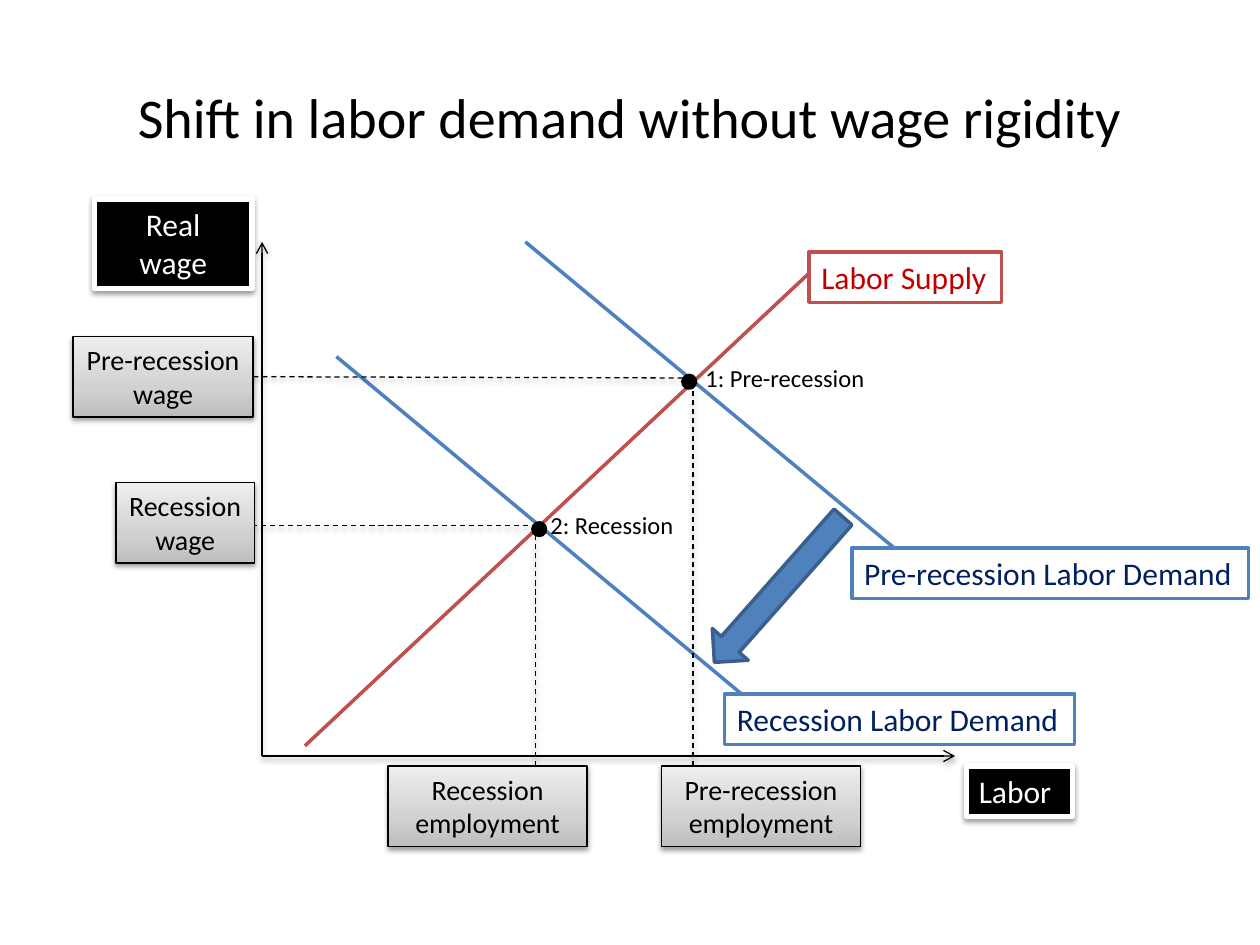
from copy import deepcopy

from lxml.etree import SubElement
from pptx import Presentation
from pptx.dml.color import RGBColor
from pptx.enum.dml import MSO_LINE
from pptx.enum.shapes import MSO_CONNECTOR, MSO_SHAPE
from pptx.enum.text import MSO_ANCHOR, MSO_AUTO_SIZE, PP_ALIGN
from pptx.oxml.ns import qn
from pptx.util import Inches, Pt

COLORS = {
    "black": "000000",
    "white": "FFFFFF",
    "demand": "4F81BD",
    "demand_text": "002060",
    "supply": "C0504D",
    "supply_text": "C00000",
    "arrow_edge": "3A5F8C",
    "grey_dark": "BDBDBD",
    "grey_middle": "D1D1D1",
    "grey_light": "EEEEEE",
}
GREY_STOPS = [(0, "grey_dark"), (0.35, "grey_middle"), (1, "grey_light")]


def rgb(name):
    return RGBColor.from_string(COLORS[name])


def add_shadow(effects):
    shadow = SubElement(effects, qn("a:outerShdw"), blurRad=str(Pt(3.1)),
                        dist=str(Pt(1.6)), dir="5400000", rotWithShape="0")
    color = SubElement(shadow, qn("a:srgbClr"), val=COLORS["black"])
    SubElement(color, qn("a:alpha"), val="38000")


def set_line(line, color, width):
    line.color.rgb = rgb(color)
    line.width = Pt(width)


def fill_grey(shape):
    shape.fill.gradient()
    shape.fill.gradient_angle = 90
    stop_list = shape._element.spPr.find(qn("a:gradFill")).find(qn("a:gsLst"))
    stop_list.append(deepcopy(stop_list[-1]))
    for stop, (position, color) in zip(shape.fill.gradient_stops, GREY_STOPS):
        stop.position = position
        stop.color.rgb = rgb(color)


def write_text(shape, lines, size, color, align, wrap):
    frame = shape.text_frame
    frame.word_wrap = wrap
    frame.auto_size = MSO_AUTO_SIZE.SHAPE_TO_FIT_TEXT
    frame.vertical_anchor = MSO_ANCHOR.TOP
    for index, line in enumerate(lines):
        para = frame.add_paragraph() if index else frame.paragraphs[0]
        para.alignment = align
        span = para.add_run()
        span.text = line
        span.font.size = Pt(size)
        span.font.name = "Calibri"
        span.font.color.rgb = rgb(color)


def add_preset(page, kind, place, fill, edge, width, shadow=False):
    shape = page.shapes.add_shape(kind, *map(Inches, place))
    if fill == "grey":
        fill_grey(shape)
    else:
        shape.fill.solid()
        shape.fill.fore_color.rgb = rgb(fill)
    set_line(shape.line, edge, width)
    shape.shadow.inherit = False
    if shadow:
        add_shadow(shape._element.spPr.find(qn("a:effectLst")))
    return shape


def add_value_box(page, place, lines, wrap):
    box = add_preset(page, MSO_SHAPE.RECTANGLE, place, "grey", "black", 0.75, True)
    write_text(box, lines, 16, "black", PP_ALIGN.CENTER, wrap)
    return box


def add_axis_box(page, place, lines, align, wrap):
    box = add_preset(page, MSO_SHAPE.RECTANGLE, place, "black", "white", 3, True)
    write_text(box, lines, 18, "white", align, wrap)


def add_curve_box(page, place, label, curve):
    box = add_preset(page, MSO_SHAPE.RECTANGLE, place, "white", curve, 2)
    write_text(box, [label], 18, curve + "_text", PP_ALIGN.LEFT, False)


def add_line(page, start, end, color="black", width=0.75, dashed=False,
             arrow=False, shadow=False):
    line = page.shapes.add_connector(MSO_CONNECTOR.STRAIGHT,
                                     *map(Inches, (*start, *end)))
    set_line(line.line, color, width)
    if dashed:
        line.line.dash_style = MSO_LINE.DASH
    if arrow:
        SubElement(line.line._get_or_add_ln(), qn("a:tailEnd"), type="arrow")
    effects = SubElement(line._element.spPr, qn("a:effectLst"))
    if shadow:
        add_shadow(effects)
    return line


def add_axis(page, start, end):
    add_line(page, start, end, arrow=True, shadow=True)


def add_guide(page, start, end):
    return add_line(page, start, end, dashed=True, shadow=True)


def add_point(page, left, top, label, label_place):
    add_preset(page, MSO_SHAPE.OVAL, (left, top, 0.1, 0.1), "black", "black", 2)
    box = page.shapes.add_textbox(*map(Inches, label_place))
    write_text(box, [label], 14, "black", PP_ALIGN.LEFT, False)


def set_title(page, text):
    title = page.shapes.title
    title.left, title.top, title.width, title.height = map(Inches, (0.5, 0.3, 9, 1.25))
    title.text_frame.vertical_anchor = MSO_ANCHOR.MIDDLE
    para = title.text_frame.paragraphs[0]
    para.alignment = PP_ALIGN.CENTER
    span = para.add_run()
    span.text = text
    span.font.size = Pt(32)
    span.font.name = "Calibri"
    span.font.color.rgb = rgb("black")


def main():
    deck = Presentation()
    deck.slide_width, deck.slide_height = Inches(10), Inches(7.5)
    page = deck.slides.add_slide(deck.slide_layouts[5])
    set_title(page, "Shift in labor demand without wage rigidity")

    origin = (2.08, 6)
    add_axis(page, origin, (7.58, 6))
    add_line(page, (2.67, 2.83), (6.08, 5.67), "demand", 2)
    add_guide(page, (2, 4.17), (4.25, 4.17))
    add_guide(page, (4.25, 6.08), (4.25, 4.17))
    add_value_box(page, (3.08, 6.08, 1.58, 0.64), ["Recession", "employment"], True)
    add_value_box(page, (0.92, 3.83, 1.1, 0.64), ["Recession", "wage"], False)
    add_axis(page, origin, (2.08, 1.92))
    add_axis_box(page, (7.67, 6.08, 0.84, 0.4), ["Labor"], PP_ALIGN.LEFT, False)
    add_axis_box(page, (0.75, 1.58, 1.25, 0.71), ["Real", "wage"], PP_ALIGN.CENTER, True)
    add_line(page, (4.17, 1.92), (7.58, 4.75), "demand", 2)
    add_guide(page, (5.5, 6.08), (5.5, 3))
    wage_guide = add_guide(page, (2.02, 2.99), (5.5, 3))
    wage_box = add_value_box(page, (0.58, 2.67, 1.43, 0.64),
                             ["Pre-recession", "wage"], False)
    wage_guide.begin_connect(wage_box, 3)
    add_value_box(page, (5.25, 6.08, 1.58, 0.64), ["Pre-recession", "employment"], True)

    add_curve_box(page, (6.76, 4.35, 3.15, 0.4), "Pre-recession Labor Demand", "demand")
    add_curve_box(page, (5.75, 5.51, 2.78, 0.4), "Recession Labor Demand", "demand")
    add_line(page, (2.42, 5.92), (6.42, 2.17), "supply", 2)
    add_curve_box(page, (6.42, 2, 1.53, 0.4), "Labor Supply", "supply")

    shift = add_preset(page, MSO_SHAPE.DOWN_ARROW, (5.99, 3.91, 0.38, 1.54),
                       "demand", "arrow_edge", 2)
    shift.rotation = 41.5
    add_point(page, 4.23, 4.15, "2: Recession", (4.27, 4, 1.19, 0.34))
    add_point(page, 5.42, 2.98, "1: Pre-recession", (5.5, 2.83, 1.47, 0.34))
    deck.save("out.pptx")


if __name__ == "__main__":
    main()
